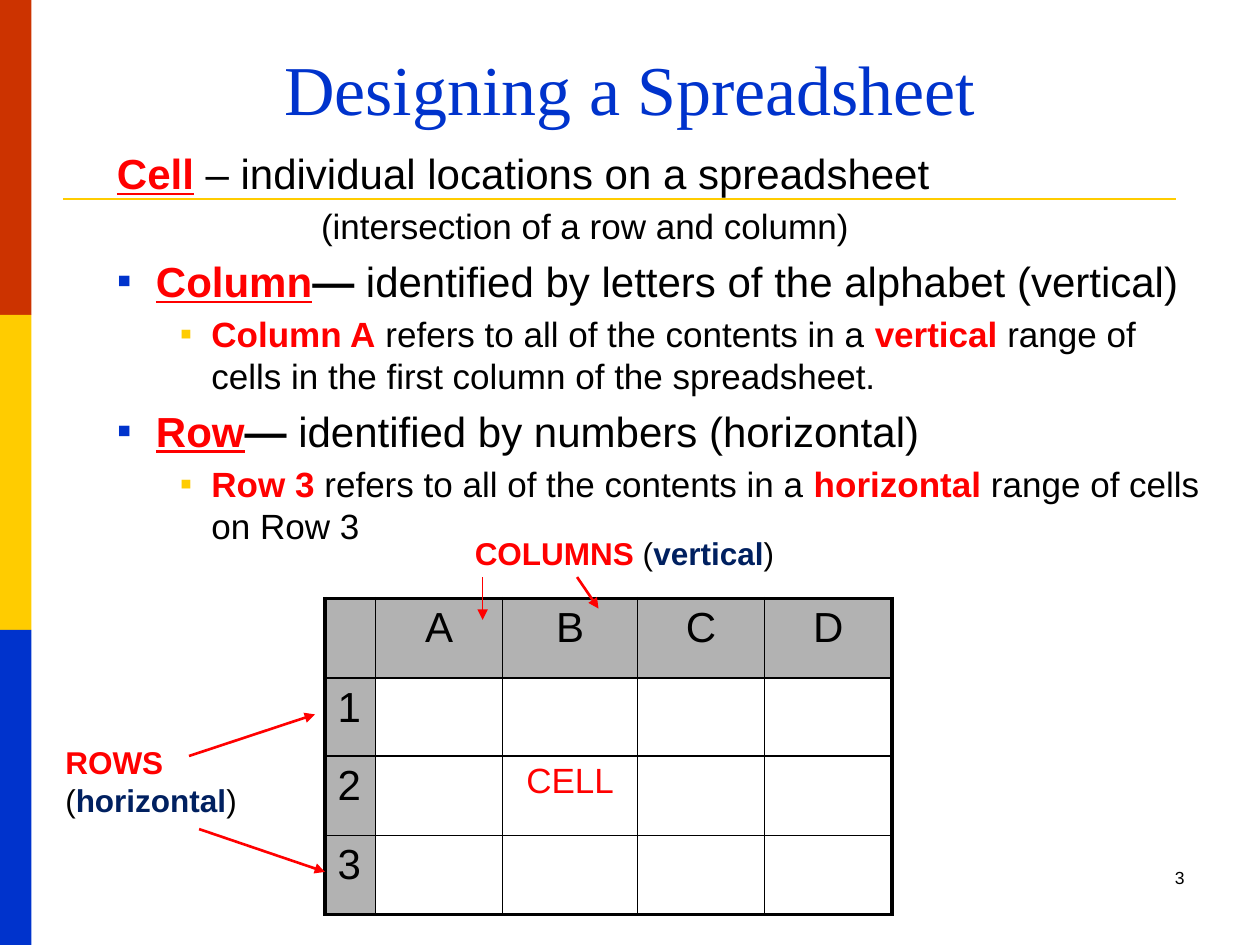
"""Build the slide on spreadsheet cells, columns and rows."""
from lxml import etree
from pptx import Presentation
from pptx import util as u
from pptx.dml.color import RGBColor
from pptx.enum import shapes, text
from pptx.oxml import ns

T = dict(
    red="FF0000", black="000000", navy="002060", blue="0033CC", yellow="FFCC00",
    brick="CC3300", grey="B2B2B2", white="FFFFFF",
    sans="Arial", serif="Times New Roman",
    title=40, h1=24, h2=20, label=18, number=10, thin=1, thick=2.25, arrow=1.5,
)
PLAIN, KEY = dict(color="black"), dict(color="red", bold=True)
TERM, DASH = dict(KEY, underline=True), dict(color="black", bold=True)
NAVY = dict(color="navy", bold=True)
CENTER, RIGHT = text.PP_ALIGN.CENTER, text.PP_ALIGN.RIGHT


def add_runs(p, runs, size, font="sans", **layout):
    for key, value in layout.items():
        setattr(p, key, value)
    for words, look in runs:
        r = p.add_run()
        r.text = words
        r.font.color.rgb = RGBColor.from_string(T[look["color"]])
        values = dict(look, size=u.Pt(T[size]), name=T[font])
        del values["color"]
        for key, value in values.items():
            setattr(r.font, key, value)


def add_box(x, y, w, h, top=0.05, anchor=text.MSO_ANCHOR.TOP):
    tf = s.shapes.add_textbox(*map(u.Inches, (x, y, w, h))).text_frame
    values = dict(word_wrap=True, margin_top=u.Inches(top), vertical_anchor=anchor)
    for key, value in values.items():
        setattr(tf, key, value)
    return tf


prs = Presentation()
prs.slide_width, prs.slide_height = u.Inches(10), u.Inches(7.5)
s = prs.slides.add_slide(prs.slide_layouts[6])

for i, color in enumerate(("brick", "yellow", "blue")):
    sp = s.shapes.add_shape(shapes.MSO_SHAPE.RECTANGLE, 0, u.Inches(2.5 * i), u.Inches(0.25), u.Inches(2.5))
    sp.shadow.inherit = False
    sp.fill.solid()
    sp.fill.fore_color.rgb = RGBColor.from_string(T[color])
    sp.line.fill.background()

tf = add_box(0.5, 0.3, 9, 0.78, anchor=text.MSO_ANCHOR.BOTTOM)
add_runs(tf.paragraphs[0], [("Designing a Spreadsheet", dict(color="blue"))], "title", "serif", alignment=CENTER)

body = [
    ("h1", 0.81, -0.31, None, [("Cell", TERM), (" – individual locations on a spreadsheet", PLAIN)]),
    ("h2", 2.12, 0, None, [("(intersection of a row and column)", PLAIN)]),
    ("h1", 0.81, -0.31, "blue", [
        ("Column", TERM), ("— ", DASH), ("identified by letters of the alphabet (vertical)", PLAIN)]),
    ("h2", 1.25, -0.25, "yellow", [
        ("Column A", KEY), (" refers to all of the contents in a ", PLAIN), ("vertical", KEY),
        (" range of cells in the first column of the spreadsheet.", PLAIN)]),
    ("h1", 0.81, -0.31, "blue", [
        ("Row", TERM), ("— ", DASH), ("identified by numbers (horizontal)", PLAIN)]),
    ("h2", 1.25, -0.25, "yellow", [
        ("Row 3", KEY), (" refers to all of the contents in a ", PLAIN), ("horizontal", KEY),
        (" range of cells on Row 3", PLAIN)]),
]
tf = add_box(0.33, 1.08, 9.33, 6.42, top=0.09)
for i, (size, left, indent, bullet, runs) in enumerate(body):
    p = tf.add_paragraph() if i else tf.paragraphs[0]
    pPr = p._p.get_or_add_pPr()
    pPr.set("marL", str(u.Inches(left)))
    pPr.set("indent", str(u.Inches(indent)))
    if bullet:
        clr = etree.SubElement(pPr, ns.qn("a:buClr"))
        etree.SubElement(clr, ns.qn("a:srgbClr"), val=T[bullet])
        etree.SubElement(pPr, ns.qn("a:buFont"), typeface=T["sans"])
        etree.SubElement(pPr, ns.qn("a:buChar"), char="▪")
    add_runs(p, runs, size, space_before=u.Pt(0.2 * T[size] if i else 0))

widths, heights = (0.4, 1.01, 1.07, 1.01, 1.01), (0.63, 0.62, 0.63, 0.63)
rows = [["", "A", "B", "C", "D"], ["1", "", "", "", ""], ["2", "", "CELL", "", ""], ["3", "", "", "", ""]]
last_row, last_col = len(rows) - 1, len(widths) - 1
tbl = s.shapes.add_table(4, 5, *map(u.Inches, (2.58, 4.75, sum(widths), sum(heights)))).table
tbl.first_row = tbl.horz_banding = False
for col, w in zip(tbl.columns, widths):
    col.width = u.Inches(w)
for i, (row, h) in enumerate(zip(rows, heights)):
    tbl.rows[i].height = u.Inches(h)
    for j, words in enumerate(row):
        cell = tbl.cell(i, j)
        header = i == 0 or j == 0
        cell.fill.solid()
        cell.fill.fore_color.rgb = RGBColor.from_string(T["grey" if header else "white"])
        if words:
            look = PLAIN if header else dict(color="red")
            add_runs(cell.text_frame.paragraphs[0], [(words, look)], "h1" if header else "h2",
                     alignment=CENTER if j else None)
        outer = dict(lnL=j == 0, lnR=j == last_col, lnT=i == 0, lnB=i == last_row)
        for k, (side, thick) in enumerate(outer.items()):
            ln = etree.Element(ns.qn("a:" + side), w=str(u.Pt(T["thick" if thick else "thin"])))
            fill = etree.SubElement(ln, ns.qn("a:solidFill"))
            etree.SubElement(fill, ns.qn("a:srgbClr"), val=T["black"])
            cell._tc.get_or_add_tcPr().insert(k, ln)

labels = [((0.42, 5.83, 1.58, 0.7), "ROWS", "horizontal"), ((3.67, 4.17, 2.83, 0.4), "COLUMNS", "vertical")]
for place, name, direction in labels:
    tf = add_box(*place, top=0.07)
    add_runs(tf.paragraphs[0], [(name, KEY), (" (", PLAIN), (direction, NAVY), (")", PLAIN)], "label")

lines = [
    (0.5, 1.58, 9.33, 1.58, "yellow", 1.5, False),
    (3.83, 4.58, 3.83, 4.92, "red", 0.75, True),
    (4.58, 4.58, 4.75, 4.83, "red", T["arrow"], True),
    (1.5, 6, 2.5, 5.67, "red", T["arrow"], True),
    (1.58, 6.58, 2.58, 6.92, "red", T["arrow"], True),
]
for *ends, color, width, arrow in lines:
    sp = s.shapes.add_connector(shapes.MSO_CONNECTOR.STRAIGHT, *map(u.Inches, ends))
    sp.line.color.rgb = RGBColor.from_string(T[color])
    sp.line.width = u.Pt(width)
    if arrow:
        etree.SubElement(sp.line._get_or_add_ln(), ns.qn("a:tailEnd"), type="triangle")
    etree.SubElement(sp._element.spPr, ns.qn("a:effectLst"))

tf = add_box(7.17, 6.83, 2.33, 0.5)
add_runs(tf.paragraphs[0], [("3", PLAIN)], "number", alignment=RIGHT)

prs.save("out.pptx")
